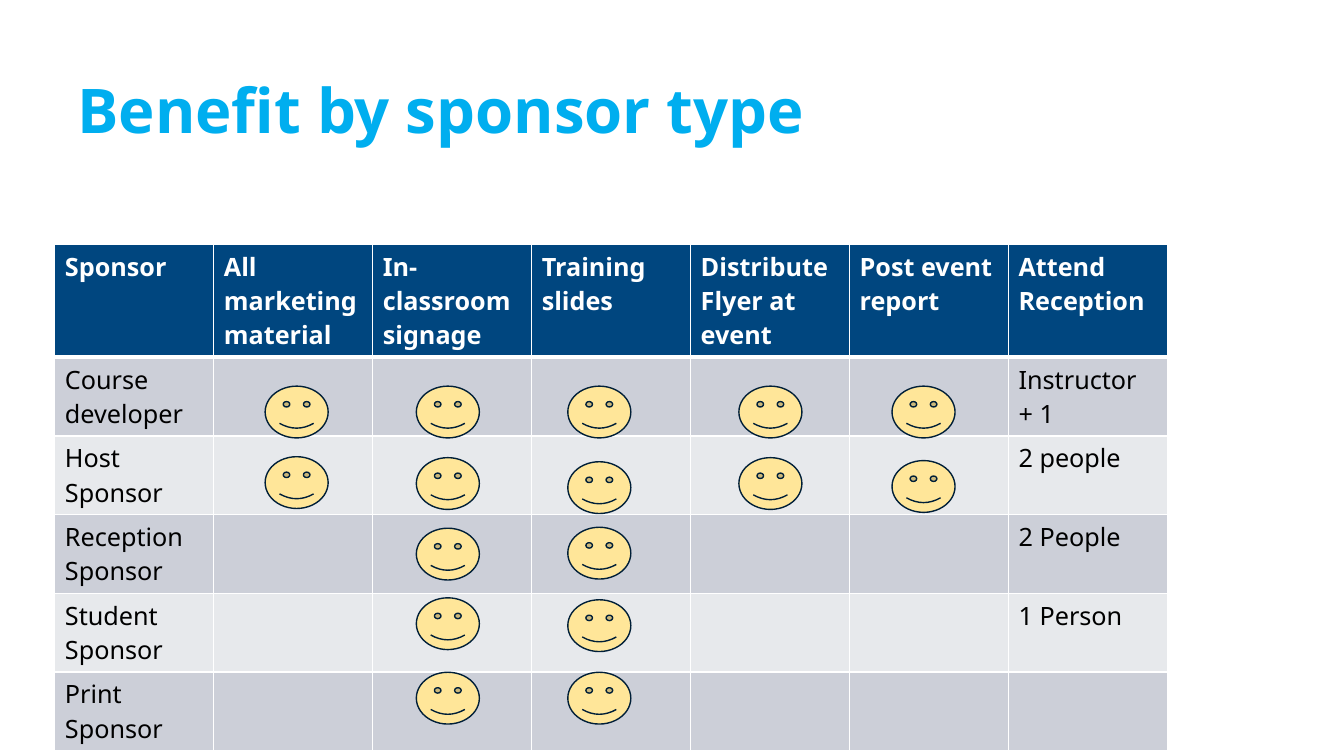
from dataclasses import dataclass

from lxml import etree
from pptx import Presentation
from pptx.dml.color import RGBColor
from pptx.enum import shapes, text
from pptx.oxml import ns
from pptx.util import Pt


@dataclass(frozen=True)
class Theme:
    font: str = "Noto Sans"
    title_size: int = 44
    table_size: int = 18
    title: str = "00AEEF"
    header: str = "00467F"
    bands: tuple = ("CCCFD8", "E7E9EC")
    white: str = "FFFFFF"
    black: str = "000000"
    face: str = "FFE699"
    face_line: str = "001F38"


THEME = Theme()

BENEFITS = ["All marketing material", "In-classroom signage", "Training slides",
            "Distribute Flyer at event", "Post event report"]
HEADER = ["Sponsor", *BENEFITS, "Attend Reception"]

# Sponsor, reception places, row height
SPONSORS = [
    ("Course developer", "Instructor + 1", 29.2),
    ("Host Sponsor", "2 people", 29.2),
    ("Reception Sponsor", "2 People", 42),
    ("Student Sponsor", "1 Person", 29.2),
    ("Print Sponsor", "", 29.2),
]

# Left edge of the faces under each benefit, and their tops for each sponsor
FACE_LEFTS = dict(zip(BENEFITS, (189.4, 297.4, 405.6, 527.8, 637.2)))
FACE_TOPS = [
    dict.fromkeys(BENEFITS, 275.8),
    dict(zip(BENEFITS, (326.2, 326.9, 329.8, 326.9, 329))),
    dict(zip(BENEFITS[1:3], (377.3, 376.6))),
    dict(zip(BENEFITS[1:3], (427, 428.4))),
    dict.fromkeys(BENEFITS[1:3], 480.2),
]


def rgb(colour):
    return RGBColor.from_string(colour)


def format_text(text_frame, size, colour, bold):
    for paragraph in text_frame.paragraphs:
        font = paragraph.font
        for run in paragraph.runs:
            font = run.font
        font.name, font.size, font.bold = THEME.font, Pt(size), bold
        font.color.rgb = rgb(colour)


def add_title(slide, wording):
    title = slide.shapes.title
    title.left, title.top, title.width, title.height = Pt(48), Pt(28.8), Pt(801.4), Pt(104.4)
    frame = title.text_frame
    frame.text = wording
    frame.word_wrap = True
    frame.vertical_anchor = text.MSO_ANCHOR.MIDDLE
    frame.paragraphs[0].alignment = text.PP_ALIGN.LEFT
    frame.paragraphs[0].line_spacing = 0.9
    format_text(frame, THEME.title_size, THEME.title, True)


def set_borders(cell, bottom_width):
    properties = cell._tc.get_or_add_tcPr()
    widths = {"lnL": 1, "lnR": 1, "lnT": 1, "lnB": bottom_width}
    for position, (side, width) in enumerate(widths.items()):
        line = etree.Element(ns.qn(f"a:{side}"), w=str(Pt(width)))
        fill = etree.SubElement(line, ns.qn("a:solidFill"))
        etree.SubElement(fill, ns.qn("a:srgbClr"), val=THEME.white)
        properties.insert(position, line)


def fill_row(table, row, wordings, fill, colour, bold=False, bottom_width=1):
    for column, wording in enumerate(wordings):
        cell = table.cell(row, column)
        cell.text = wording
        cell.fill.solid()
        cell.fill.fore_color.rgb = rgb(fill)
        set_borders(cell, bottom_width)
        format_text(cell.text_frame, THEME.table_size, colour, bold)


def add_benefit_table(slide):
    frame = slide.shapes.add_table(len(SPONSORS) + 1, len(HEADER),
                                   Pt(39.2), Pt(174.5), Pt(794.9), Pt(345.6))
    table = frame.table
    for column in table.columns:
        column.width = Pt(113.55)
    table.rows[0].height = Pt(29.2)
    fill_row(table, 0, HEADER, THEME.header, THEME.white, bold=True, bottom_width=3)
    for row, (sponsor, places, height) in enumerate(SPONSORS, start=1):
        table.rows[row].height = Pt(height)
        wordings = [sponsor, *[""] * len(BENEFITS), places]
        fill_row(table, row, wordings, THEME.bands[(row - 1) % 2], THEME.black)
    frame.height = Pt(345.6)


def add_face(slide, left, top):
    face = slide.shapes.add_shape(shapes.MSO_SHAPE.SMILEY_FACE,
                                  Pt(left), Pt(top), Pt(45), Pt(37))
    face.shadow.inherit = False
    face.fill.solid()
    face.fill.fore_color.rgb = rgb(THEME.face)
    face.line.color.rgb = rgb(THEME.face_line)
    face.line.width = Pt(1)


def main():
    presentation = Presentation()
    presentation.slide_width, presentation.slide_height = Pt(960), Pt(540)
    slide = presentation.slides.add_slide(presentation.slide_layouts.get_by_name("Title Only"))

    # Title and table
    add_title(slide, "Benefit by sponsor type")
    add_benefit_table(slide)

    # One face for each benefit a sponsor gets
    for tops in FACE_TOPS:
        for benefit, top in tops.items():
            add_face(slide, FACE_LEFTS[benefit], top)

    presentation.save("out.pptx")


if __name__ == "__main__":
    main()
